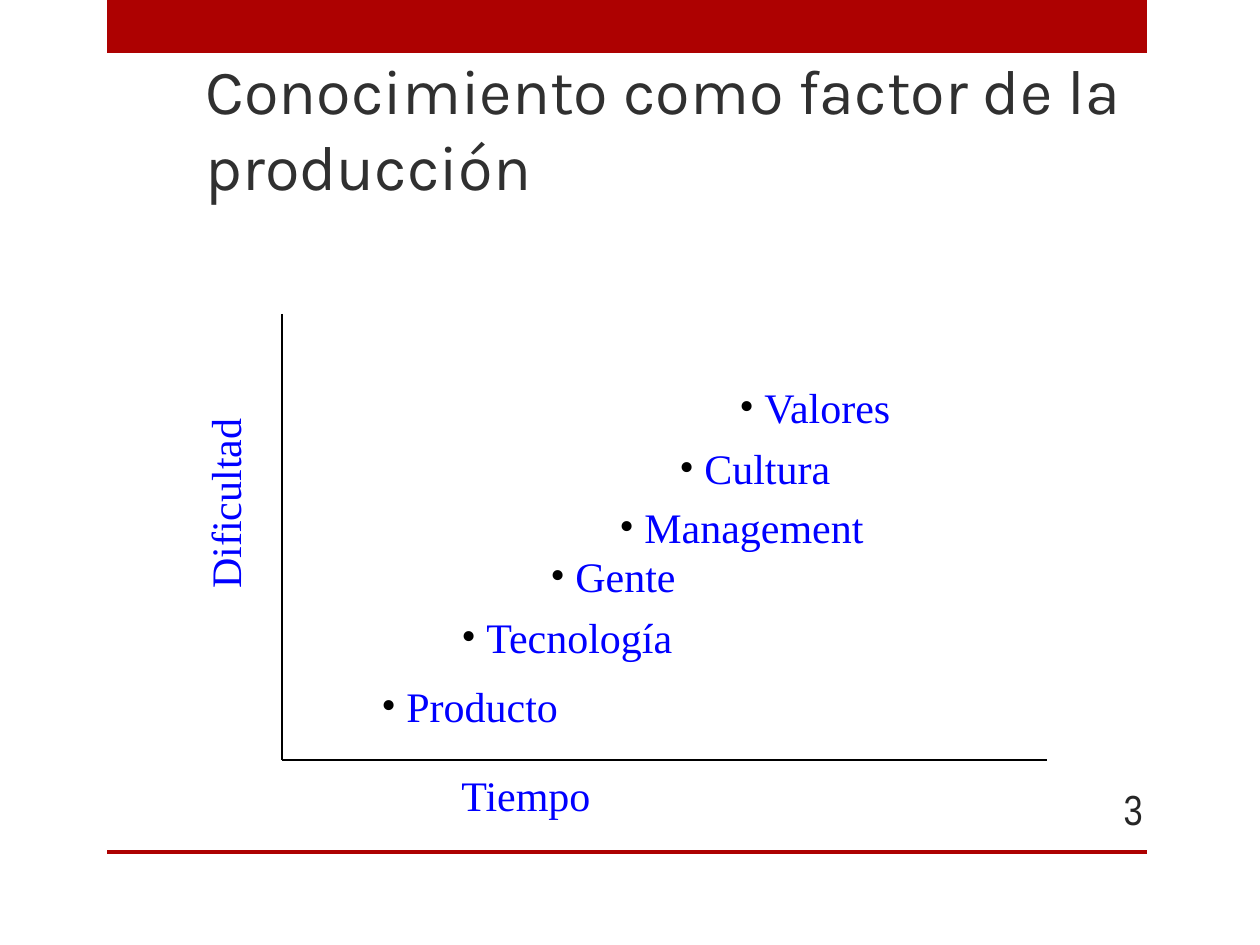
from lxml.etree import SubElement
from pptx import Presentation
from pptx.dml.color import RGBColor
from pptx.enum.shapes import MSO_CONNECTOR, MSO_SHAPE
from pptx.enum.text import MSO_ANCHOR, MSO_AUTO_SIZE, PP_ALIGN
from pptx.oxml.ns import qn
from pptx.util import Emu, Pt

PX = 914400 / 126
COLORS = {"band": "AD0101", "title": "303030", "axis": "000000",
          "label": "0000FF", "number": "262626"}
SERIF = "Times New Roman"
LABEL_HEIGHT = 63
BULLET_INDENT = 25
STAGES = [
    ("Producto", 87, 360, 202),
    ("Tecnología", 167, 291, 239),
    ("Gente", 256, 230, 151),
    ("Management", 325, 181, 270),
    ("Cultura", 385, 122, 176),
    ("Valores", 445, 61, 181),
]


def px(*lengths):
    return [Emu(round(length * PX)) for length in lengths]


def color(name):
    return RGBColor.from_string(COLORS[name])


def style(paragraph, font, size, ink):
    paragraph.font.name = font
    paragraph.font.size = Pt(size)
    paragraph.font.color.rgb = color(ink)


def add_bands(slide, left, top, width, height):
    for offset, thickness in ((0, 53), (height - 4, 4)):
        band = slide.shapes.add_shape(
            MSO_SHAPE.RECTANGLE, *px(left, top + offset, width, thickness))
        band.shadow.inherit = False
        band.fill.solid()
        band.fill.fore_color.rgb = color("band")
        band.line.fill.background()


def add_title(slide, left, top, width, height):
    title = slide.shapes.title
    title.left, title.top, title.width, title.height = px(left, top, width, height)
    frame = title.text_frame
    frame.text = "Conocimiento como factor de la producción"
    frame.auto_size = MSO_AUTO_SIZE.NONE
    frame.vertical_anchor = MSO_ANCHOR.TOP
    frame.margin_top, = px(7)
    heading = frame.paragraphs[0]
    heading.alignment = PP_ALIGN.LEFT
    style(heading, "Karla", 36, "title")


def add_label(slide, text, left, top, width, rotation=0):
    label = slide.shapes.add_textbox(*px(left, top, width, LABEL_HEIGHT))
    label.rotation = rotation
    frame = label.text_frame
    frame.word_wrap = False
    frame.auto_size = MSO_AUTO_SIZE.SHAPE_TO_FIT_TEXT
    frame.text = text
    style(frame.paragraphs[0], SERIF, 24, "label")
    return frame.paragraphs[0]


def add_bullet(paragraph):
    indent, = px(BULLET_INDENT)
    properties = paragraph._p.get_or_add_pPr()
    properties.set("marL", str(indent))
    properties.set("indent", str(-indent))
    bullet_color = SubElement(properties, qn("a:buClr"))
    SubElement(bullet_color, qn("a:srgbClr"), val=COLORS["axis"])
    SubElement(properties, qn("a:buFont"), typeface=SERIF)
    SubElement(properties, qn("a:buChar"), char="•")
    defaults = properties.find(qn("a:defRPr"))
    properties.append(defaults)


def add_axis(slide, *ends):
    axis = slide.shapes.add_connector(MSO_CONNECTOR.STRAIGHT, *px(*ends))
    axis.line.color.rgb = color("axis")
    axis.line.width = Pt(0.75)
    SubElement(axis._element.spPr, qn("a:effectLst"))


def add_diagram(slide, left, top, width, height):
    bottom = top + height
    add_axis(slide, left, top, left, bottom)
    add_axis(slide, left, bottom, left + width, bottom)
    add_label(slide, "Tiempo", left + 167, bottom + 3, 156)
    add_label(slide, "Dificultad", left - 160, top + 153, 205, 270)
    for stage, x, y, stage_width in STAGES:
        add_bullet(add_label(slide, stage, left + x, top + y, stage_width))


def add_page_number(slide, left, top, width, height):
    frame = slide.shapes.add_textbox(*px(left, top, width, height)).text_frame
    frame.word_wrap = True
    frame.vertical_anchor = MSO_ANCHOR.MIDDLE
    frame.text = "3"
    number = frame.paragraphs[0]
    number.alignment = PP_ALIGN.RIGHT
    style(number, "Arial Narrow", 24, "number")


def main():
    deck = Presentation()
    deck.slide_width, deck.slide_height = px(1260, 945)
    slide = deck.slides.add_slide(deck.slide_layouts[5])
    add_bands(slide, 107, 0, 1040, 854)
    add_title(slide, 193, 45, 1008, 158)
    add_diagram(slide, 282, 314, 765, 446)
    add_page_number(slide, 1050, 784, 105, 50)
    deck.save("out.pptx")


if __name__ == "__main__":
    main()
